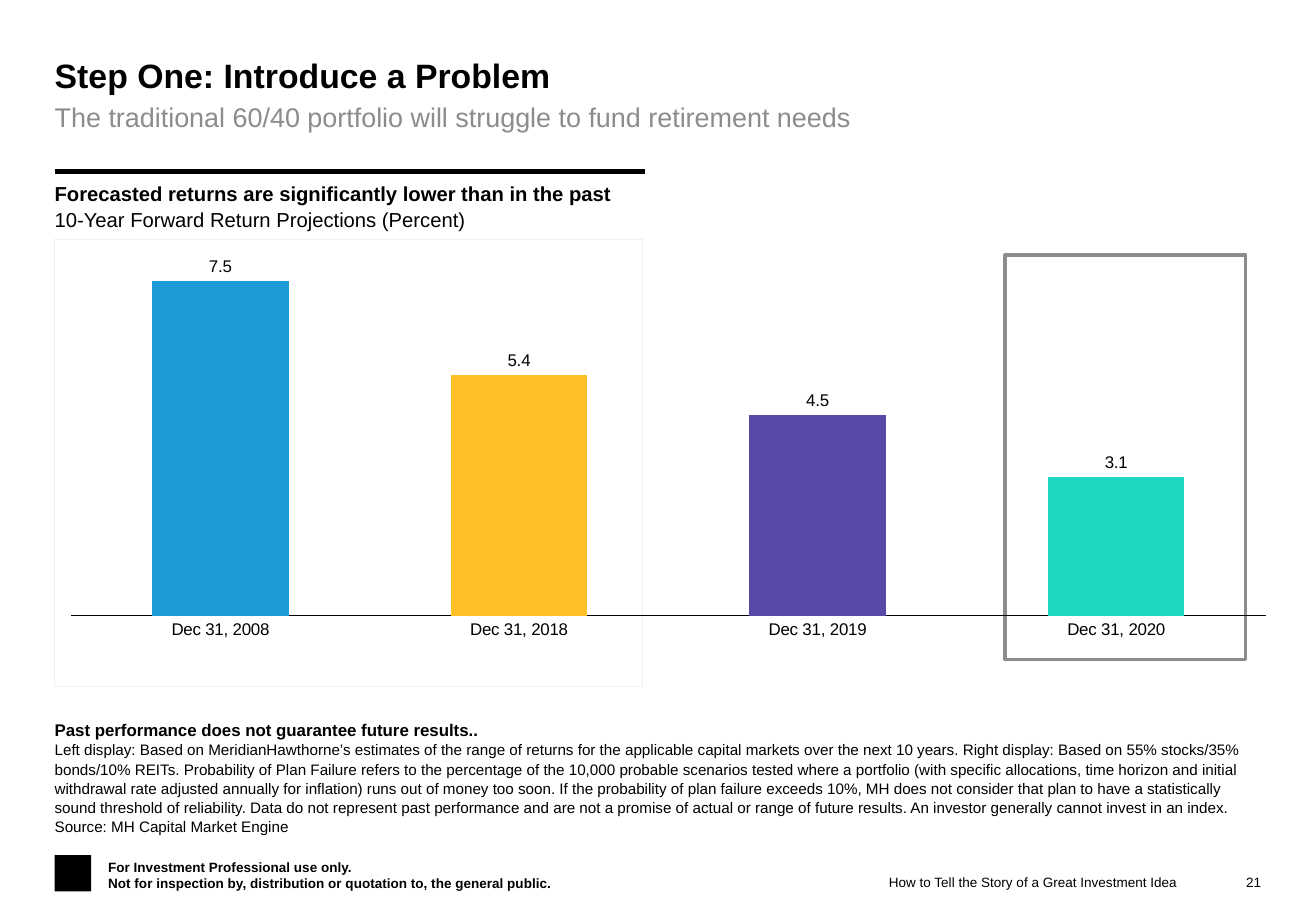
"""Build the slide on forecasted portfolio returns."""
from lxml.etree import SubElement
from pptx import Presentation
from pptx.chart.data import CategoryChartData
from pptx.dml.color import RGBColor
from pptx.enum.chart import XL_CHART_TYPE, XL_LABEL_POSITION, XL_TICK_LABEL_POSITION, XL_TICK_MARK
from pptx.enum.shapes import MSO_CONNECTOR, MSO_SHAPE
from pptx.enum.text import MSO_ANCHOR, MSO_AUTO_SIZE, PP_ALIGN
from pptx.oxml.ns import qn
from pptx.util import Pt

BLACK = RGBColor(0x00, 0x00, 0x00)
WHITE = RGBColor(0xFF, 0xFF, 0xFF)
GREY = RGBColor(0x8C, 0x8C, 0x8C)
PALE_GREY = RGBColor(0xF0, 0xF0, 0xF0)
BLUE = RGBColor(0x1E, 0x9B, 0xD7)
YELLOW = RGBColor(0xFF, 0xBF, 0x27)
PURPLE = RGBColor(0x59, 0x49, 0xA7)
TEAL = RGBColor(0x1C, 0xD8, 0xC0)
FONT = "Arial"
PX = 9144
LEFT = 45

TITLE = [("Step One: Introduce a Problem", 20, True)]
SUBTITLE = [("The traditional 60/40 portfolio will struggle to fund retirement needs", 16, False)]
HEADING = [
    ("Forecasted returns are significantly lower than in the past", 12, True),
    ("10-Year Forward Return Projections (Percent)", 12, False),
]
NOTES = [
    ("Past performance does not guarantee future results..", 10, True),
    ("Left display: Based on MeridianHawthorne’s estimates of the range of returns for the "
     "applicable capital markets over the next 10 years. Right display: Based on 55% stocks/35% "
     "bonds/10% REITs. Probability of Plan Failure refers to the percentage of the 10,000 probable "
     "scenarios tested where a portfolio (with specific allocations, time horizon and initial "
     "withdrawal rate adjusted annually for inflation) runs out of money too soon. If the "
     "probability of plan failure exceeds 10%, MH does not consider that plan to have a "
     "statistically sound threshold of reliability. Data do not represent past performance and "
     "are not a promise of actual or range of future results. An investor generally cannot "
     "invest in an index.", 9, False),
    ("Source: MH Capital Market Engine", 9, False),
]
DISCLAIMER = [
    ("For Investment Professional use only.", 8, True),
    ("Not for inspection by, distribution or quotation to, the general public.", 8, True),
]
DECK_NAME = [("How to Tell the Story of a Great Investment Idea", 8, False)]
PAGE_NUMBER = [("21", 8, False)]
RETURNS = [
    ("Dec 31, 2008", 7.5, BLUE),
    ("Dec 31, 2018", 5.4, YELLOW),
    ("Dec 31, 2019", 4.5, PURPLE),
    ("Dec 31, 2020", 3.1, TEAL),
]
TEXT_BOXES = [
    (HEADING, (LEFT, 143, 486, 54), MSO_ANCHOR.TOP, PP_ALIGN.LEFT, 5, 1.07),
    (NOTES, (LEFT, 595, 997, 93), MSO_ANCHOR.BOTTOM, PP_ALIGN.LEFT, 0, 1.05),
    (DISCLAIMER, (89, 707, 411, 27), MSO_ANCHOR.BOTTOM, PP_ALIGN.LEFT, 0, 1),
    (DECK_NAME, (691, 719, 278, 15), MSO_ANCHOR.MIDDLE, PP_ALIGN.RIGHT, 0, 1),
    (PAGE_NUMBER, (1006, 719, 32, 15), MSO_ANCHOR.MIDDLE, PP_ALIGN.RIGHT, 0, 1),
]
RECTANGLES = [
    ((LEFT, 704, 30, 30), BLACK, None, 0),
    ((LEFT, 197, 484, 368), None, PALE_GREY, 0.75),
    ((827, 210, 198, 333), WHITE, GREY, 2.25),
]


def scaled(box):
    return [length * PX for length in box]


def write_text(shape, lines, anchor=MSO_ANCHOR.TOP, alignment=PP_ALIGN.LEFT,
               inset=0, spacing=1, color=BLACK):
    frame = shape.text_frame
    frame.word_wrap = True
    frame.auto_size = MSO_AUTO_SIZE.NONE
    frame.vertical_anchor = anchor
    frame.margin_left = frame.margin_right = 0
    frame.margin_top = frame.margin_bottom = inset * PX
    for index, (text, size, bold) in enumerate(lines):
        paragraph = frame.add_paragraph() if index else frame.paragraphs[0]
        paragraph.alignment = alignment
        paragraph.line_spacing = spacing
        paragraph.space_before = Pt(0)
        run = paragraph.add_run()
        run.text = text
        run.font.name = FONT
        run.font.size = Pt(size)
        run.font.bold = bold
        run.font.color.rgb = color


def fill_placeholder(shape, box, lines, color):
    shape.left, shape.top, shape.width, shape.height = scaled(box)
    write_text(shape, lines, color=color)


def remove_bullet(paragraph):
    properties = paragraph._p.get_or_add_pPr()
    properties.set("marL", "0")
    properties.set("indent", "0")
    SubElement(properties, qn("a:buNone"))


def add_rectangle(slide, box, fill, line, weight):
    shape = slide.shapes.add_shape(MSO_SHAPE.RECTANGLE, *scaled(box))
    shape.shadow.inherit = False
    if fill is None:
        shape.fill.background()
    else:
        shape.fill.solid()
        shape.fill.fore_color.rgb = fill
    if line is None:
        shape.line.fill.background()
    else:
        shape.line.color.rgb = line
        shape.line.width = Pt(weight)


def add_rule(slide):
    start_x, start_y, end_x, end_y = scaled((LEFT, 141, 531, 141))
    rule = slide.shapes.add_connector(MSO_CONNECTOR.STRAIGHT, start_x, start_y, end_x, end_y)
    rule.line.color.rgb = BLACK
    rule.line.width = Pt(3)
    SubElement(rule._element.spPr, qn("a:effectLst"))


def set_plot_layout(chart):
    plot_area = chart._chartSpace.chart.plotArea
    for existing in plot_area.findall(qn("c:layout")):
        plot_area.remove(existing)
    layout = plot_area.makeelement(qn("c:layout"))
    plot_area.insert(0, layout)
    manual = SubElement(layout, qn("c:manualLayout"))
    settings = [("layoutTarget", "inner"), ("xMode", "edge"), ("yMode", "edge"),
                ("x", "0"), ("y", "0.03"), ("w", "1"), ("h", "0.9")]
    for name, value in settings:
        SubElement(manual, qn(f"c:{name}")).set("val", value)


def add_returns_chart(slide):
    data = CategoryChartData()
    data.categories = [date for date, value, color in RETURNS]
    data.add_series("Series 1", [value for date, value, color in RETURNS])
    frame = slide.shapes.add_chart(XL_CHART_TYPE.COLUMN_CLUSTERED, *scaled((58, 203, 984, 327)), data)
    chart = frame.chart
    chart.has_legend = False
    chart.has_title = False
    chart.font.name = FONT
    chart.font.size = Pt(10)
    chart.font.color.rgb = BLACK
    for axis in (chart.category_axis, chart.value_axis):
        axis.major_tick_mark = axis.minor_tick_mark = XL_TICK_MARK.NONE
        axis.has_major_gridlines = False
    chart.category_axis.format.line.color.rgb = BLACK
    chart.category_axis.format.line.width = Pt(0.75)
    chart.value_axis.minimum_scale = 0
    chart.value_axis.maximum_scale = 8
    chart.value_axis.tick_label_position = XL_TICK_LABEL_POSITION.NONE
    chart.value_axis.format.line.fill.background()
    plot = chart.plots[0]
    plot.gap_width = 119
    plot.vary_by_categories = False
    plot.has_data_labels = True
    plot.data_labels.show_value = True
    plot.data_labels.position = XL_LABEL_POSITION.OUTSIDE_END
    plot.data_labels.number_format = "0.0"
    plot.data_labels.number_format_is_linked = False
    for index, (date, value, color) in enumerate(RETURNS):
        fill = plot.series[0].points[index].format.fill
        fill.solid()
        fill.fore_color.rgb = color
    set_plot_layout(chart)


def main():
    presentation = Presentation()
    presentation.slide_width, presentation.slide_height = scaled((1083, 750))
    slide = presentation.slides.add_slide(presentation.slide_layouts[1])
    fill_placeholder(slide.shapes.title, (LEFT, 45, 993, 34), TITLE, BLACK)
    subtitle = slide.placeholders[1]
    fill_placeholder(subtitle, (LEFT, 83, 993, 77), SUBTITLE, GREY)
    remove_bullet(subtitle.text_frame.paragraphs[0])
    add_rule(slide)
    for lines, box, anchor, alignment, inset, spacing in TEXT_BOXES:
        write_text(slide.shapes.add_textbox(*scaled(box)), lines, anchor, alignment, inset, spacing)
    for rectangle in RECTANGLES:
        add_rectangle(slide, *rectangle)
    add_returns_chart(slide)
    presentation.save("out.pptx")


if __name__ == "__main__":
    main()
